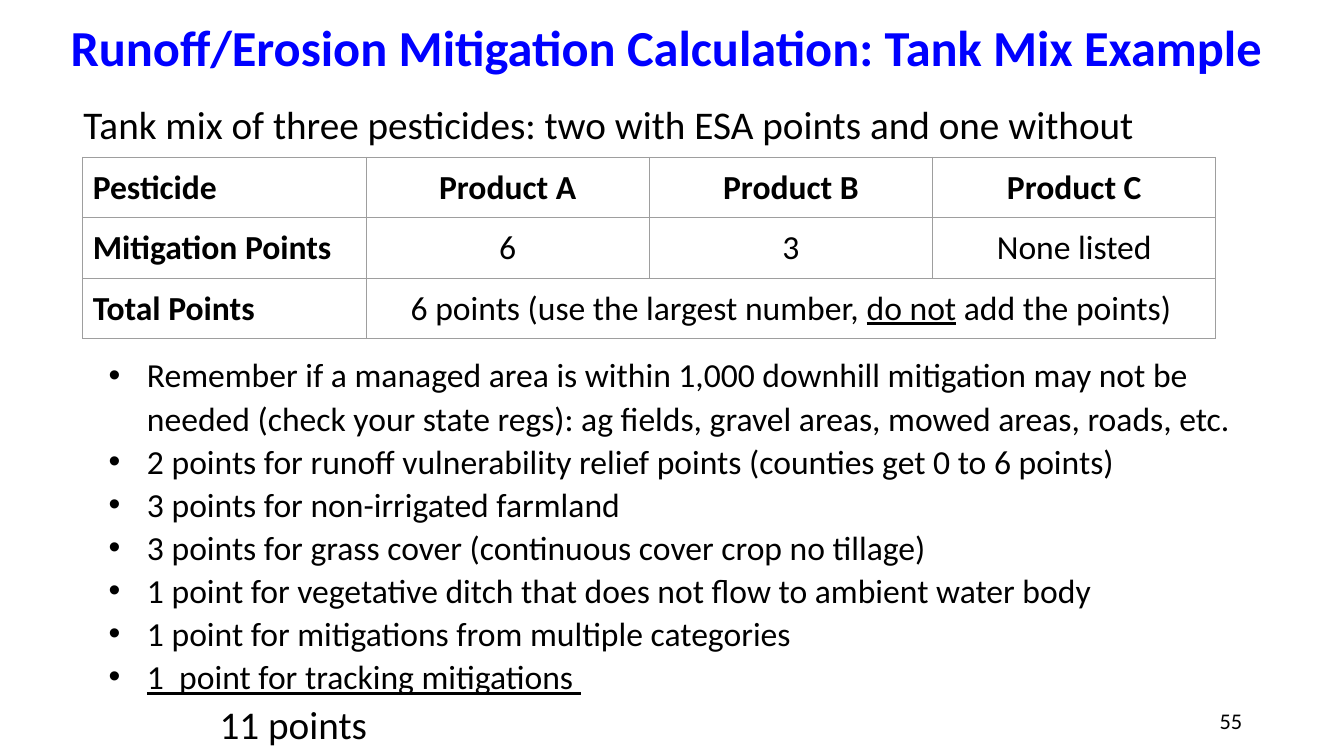
from lxml.etree import SubElement
from pptx import Presentation
from pptx.dml.color import RGBColor
from pptx.enum.text import MSO_ANCHOR, PP_ALIGN
from pptx.oxml import parse_xml
from pptx.oxml.ns import nsdecls, qn
from pptx.util import Inches, Pt


def color(value):
    return RGBColor.from_string(value)


def write(paragraph, text, size=24, bold=False, underline=False, fill="000000", align=PP_ALIGN.LEFT):
    paragraph.alignment = align
    run = paragraph.add_run()
    run.text = text
    run.font.name = "Calibri"
    run.font.size = Pt(size)
    run.font.bold = bold
    run.font.underline = underline
    run.font.color.rgb = color(fill)


class SlideBuilder:
    line_spacing = 1.07
    border = "9E9E9E"

    def __init__(self, slide):
        self.slide = slide

    def text_box(self, left, top, width, height, inset=True, anchor=MSO_ANCHOR.TOP):
        shape = self.slide.shapes.add_textbox(Inches(left), Inches(top), Inches(width), Inches(height))
        frame = shape.text_frame
        frame.word_wrap = True
        frame.vertical_anchor = anchor
        frame.margin_left = frame.margin_right = Inches(0.1 if inset else 0)
        frame.margin_top = frame.margin_bottom = Inches(0.05 if inset else 0)
        return frame

    def indent(self, paragraph, left, hanging=0.0, bullet=False):
        properties = paragraph._p.get_or_add_pPr()
        properties.set("marL", str(Inches(left)))
        properties.set("indent", str(Inches(-hanging)))
        if bullet:
            bullet_color = SubElement(properties, qn("a:buClr"))
            SubElement(bullet_color, qn("a:srgbClr")).set("val", "000000")
            SubElement(properties, qn("a:buFont")).set("typeface", "Arial")
            SubElement(properties, qn("a:buChar")).set("char", "•")
        paragraph.line_spacing = self.line_spacing

    def format_cell(self, cell):
        cell.margin_left = cell.margin_right = Inches(0.1)
        cell.margin_top = cell.margin_bottom = Inches(0.1)
        cell.fill.background()
        properties = cell._tc.get_or_add_tcPr()
        for position, side in enumerate("LRTB"):
            properties.insert(position, parse_xml(
                f'<a:ln{side} {nsdecls("a")} w="{Pt(0.75)}"><a:solidFill>'
                f'<a:srgbClr val="{self.border}"/></a:solidFill></a:ln{side}>'))

    def table(self, left, top, column_width, row_height, rows):
        columns = len(rows[0])
        shape = self.slide.shapes.add_table(
            len(rows), columns, Inches(left), Inches(top),
            Inches(column_width * columns), Inches(row_height * len(rows)))
        table = shape.table
        table.first_row = table.horz_banding = False
        for row_index, values in enumerate(rows):
            for column_index in range(columns):
                cell = table.cell(row_index, column_index)
                self.format_cell(cell)
                if column_index < len(values):
                    heading = row_index == 0 or column_index == 0
                    align = PP_ALIGN.CENTER if column_index else PP_ALIGN.LEFT
                    for text, underline in values[column_index]:
                        write(cell.text_frame.paragraphs[0], text, bold=heading,
                              underline=underline, align=align)
            if len(values) < columns:
                table.cell(row_index, len(values) - 1).merge(table.cell(row_index, columns - 1))


def plain(*texts):
    return [[(text, False)] for text in texts]


INTRO = "Tank mix of three pesticides: two with ESA points and one without"
BULLETS = [
    "Remember if a managed area is within 1,000 downhill mitigation may not be needed "
    "(check your state regs): ag fields, gravel areas, mowed areas, roads, etc.",
    "2 points for runoff vulnerability relief points (counties get 0 to 6 points)",
    "3 points for non-irrigated farmland",
    "3 points for grass cover (continuous cover crop no tillage)",
    "1 point for vegetative ditch that does not flow to ambient water body",
    "1 point for mitigations from multiple categories",
    "1  point for tracking mitigations ",
]
TABLE_ROWS = [
    plain("Pesticide", "Product A", "Product B", "Product C"),
    plain("Mitigation Points", "6", "3", "None listed"),
    plain("Total Points") + [[("6 points (use the largest number, ", False),
                              ("do not", True), (" add the points)", False)]],
]


def main():
    presentation = Presentation()
    presentation.slide_width = Inches(13.33)
    presentation.slide_height = Inches(7.5)
    builder = SlideBuilder(presentation.slides.add_slide(presentation.slide_layouts[6]))

    title = builder.text_box(0.7, 0, 12.22, 0.91, inset=False, anchor=MSO_ANCHOR.MIDDLE)
    write(title.paragraphs[0], "Runoff/Erosion Mitigation Calculation: Tank Mix Example",
          size=36, bold=True, fill="0000FF")

    number = builder.text_box(9.42, 6.95, 3, 0.4, anchor=MSO_ANCHOR.MIDDLE)
    write(number.paragraphs[0], "55", size=16, align=PP_ALIGN.RIGHT)

    body = builder.text_box(0.61, 0.91, 12.1, 6.59)
    intro = body.paragraphs[0]
    builder.indent(intro, 0.12)
    write(intro, INTRO, size=28)
    for index, text in enumerate(BULLETS):
        paragraph = body.add_paragraph()
        builder.indent(paragraph, 0.75, hanging=0.38, bullet=True)
        paragraph.space_before = Pt(0 if index else 146)
        write(paragraph, text, underline=text == BULLETS[-1])
    total = body.add_paragraph()
    builder.indent(total, 1.47)
    write(total, "11 points", size=28)

    builder.table(0.82, 1.56, 2.81, 0.6, TABLE_ROWS)
    presentation.save("out.pptx")


if __name__ == "__main__":
    main()
